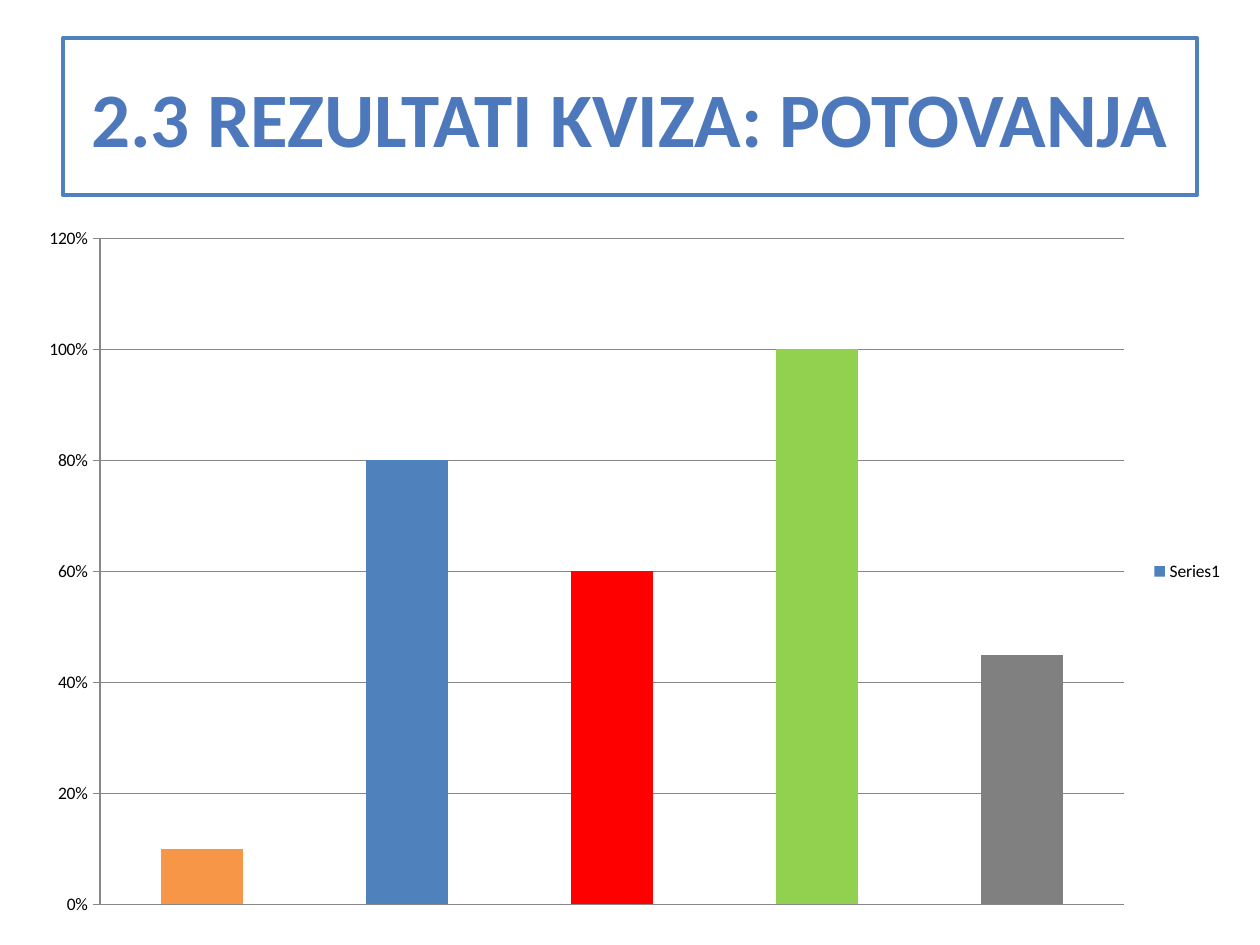
from pptx import Presentation
from pptx.chart.data import CategoryChartData
from pptx.dml.color import RGBColor
from pptx.enum.chart import XL_CHART_TYPE, XL_LEGEND_POSITION, XL_TICK_MARK
from pptx.enum.shapes import MSO_SHAPE
from pptx.enum.text import MSO_ANCHOR, PP_ALIGN
from pptx.util import Inches, Pt

FONT = "Calibri"
COLORS = {
    "white": "FFFFFF", "black": "000000", "blue": "4F81BD", "title": "4D79BC",
    "orange": "F79646", "red": "FF0000", "green": "92D050", "gray": "808080",
    "grid": "878787",
}
# Score and bar colour of each quiz answer
SCORES = [(0.1, "orange"), (0.8, "blue"), (0.6, "red"), (1, "green"), (0.45, "gray")]


def color(name):
    return RGBColor.from_string(COLORS[name])


def paint(fill, name):
    fill.solid()
    fill.fore_color.rgb = color(name)


def style(font, size, name, bold=False):
    font.name = FONT
    font.size = Pt(size)
    font.bold = bold
    font.color.rgb = color(name)


def rule(line, name, width):
    line.color.rgb = color(name)
    line.width = Pt(width)


def add_title(slide, text):
    box = slide.shapes.add_shape(
        MSO_SHAPE.RECTANGLE, Inches(0.5), Inches(0.3), Inches(9), Inches(1.25))
    box.shadow.inherit = False
    paint(box.fill, "white")
    rule(box.line, "blue", 2)
    frame = box.text_frame
    frame.word_wrap = True
    frame.vertical_anchor = MSO_ANCHOR.MIDDLE
    line = frame.paragraphs[0]
    line.text = text
    line.alignment = PP_ALIGN.CENTER
    style(line.font, 44, "title", bold=True)


def add_bars(slide):
    data = CategoryChartData(number_format="0%")
    data.categories = [str(i + 1) for i in range(len(SCORES))]
    data.add_series("Series1", [score for score, _ in SCORES])
    chart = slide.shapes.add_chart(
        XL_CHART_TYPE.COLUMN_CLUSTERED, Inches(0.2), Inches(1.7),
        Inches(9.61), Inches(5.67), data).chart
    style(chart.font, 10, "black")
    chart.has_title = False

    # Legend
    chart.has_legend = True
    chart.legend.position = XL_LEGEND_POSITION.RIGHT
    chart.legend.include_in_layout = False

    # Axes
    chart.category_axis.visible = False
    axis = chart.value_axis
    axis.minimum_scale, axis.maximum_scale, axis.major_unit = 0, 1.2, 0.2
    axis.major_tick_mark = XL_TICK_MARK.OUTSIDE
    axis.tick_labels.number_format = "0%"
    axis.tick_labels.number_format_is_linked = False
    axis.has_major_gridlines = True
    for line in (axis.format.line, axis.major_gridlines.format.line):
        rule(line, "grid", 0.75)

    # Bars
    plot = chart.plots[0]
    plot.gap_width = 150
    plot.vary_by_categories = False
    bars = plot.series[0]
    paint(bars.format.fill, "blue")
    for i, (_, name) in enumerate(SCORES):
        if name != "blue":
            paint(bars.points[i].format.fill, name)


def main():
    deck = Presentation()
    deck.slide_width, deck.slide_height = Inches(10), Inches(7.5)
    slide = deck.slides.add_slide(deck.slide_layouts[6])
    add_title(slide, "2.3 REZULTATI KVIZA: POTOVANJA")
    add_bars(slide)
    deck.save("out.pptx")


if __name__ == "__main__":
    main()
